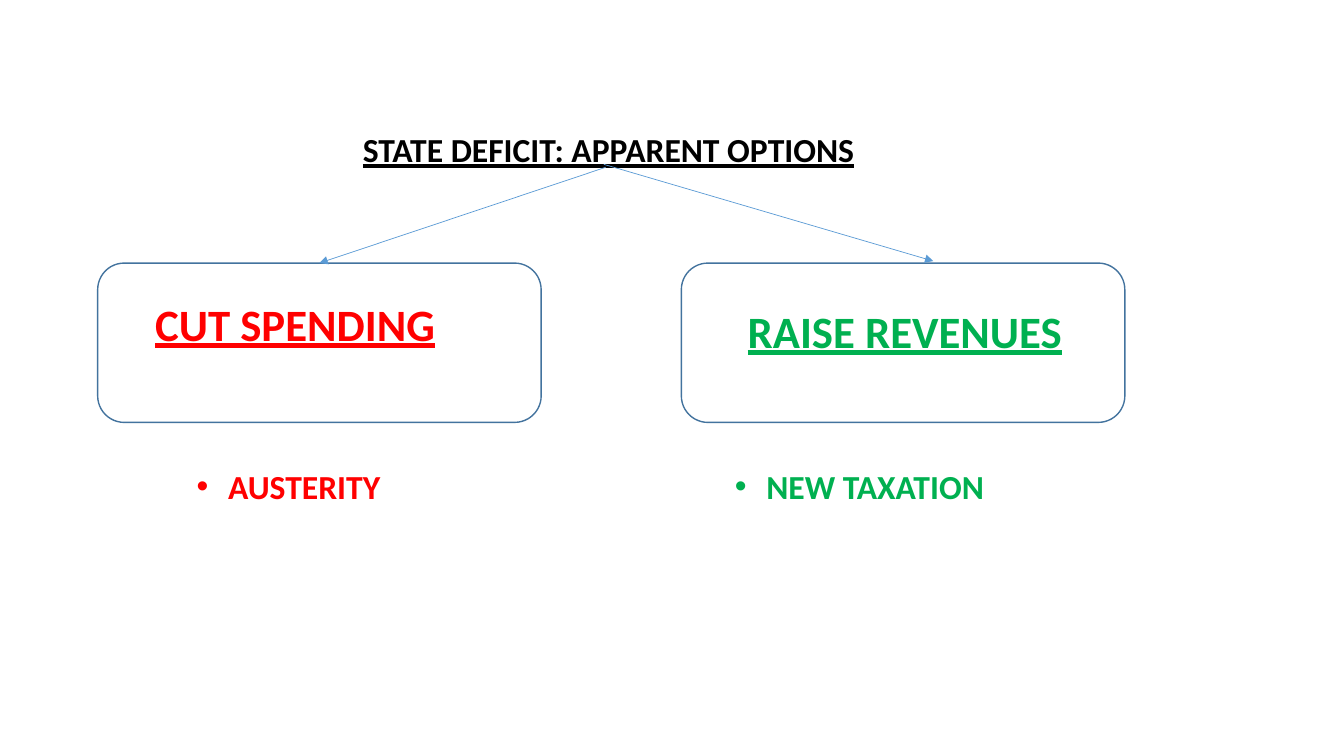
"""Build a slide that sets out the two apparent options for a state deficit."""
from lxml import etree
from pptx import Presentation
from pptx.dml.color import RGBColor
from pptx.enum.shapes import MSO_CONNECTOR, MSO_SHAPE
from pptx.enum.text import MSO_ANCHOR, MSO_AUTO_SIZE, PP_ALIGN
from pptx.oxml.ns import qn
from pptx.util import Pt

STRAIGHT = MSO_CONNECTOR.STRAIGHT
ROUNDED = MSO_SHAPE.ROUNDED_RECTANGLE
TOP = MSO_ANCHOR.TOP
LEFT = PP_ALIGN.LEFT
NO_FIT = MSO_AUTO_SIZE.NONE

COLORS = {"title": "000000", "cut": "FF0000", "raise": "00B050",
          "border": "43739E", "arrow": "5B9BD5"}
FONT = "Calibri"
TITLE = ("STATE DEFICIT: APPARENT OPTIONS", (252, 88.6, 440.6, 36))
OPTIONS = [
    {"color": "cut", "box_left": 69.8,
     "heading": ("CUT SPENDING", (103.7, 208.1, 353.5, 46)),
     "bullet": ("AUSTERITY", (133.2, 329, 295.2, 36)),
     "arrow": (432.7, 119.5, 228.2, 187.9)},
    {"color": "raise", "box_left": 486.7,
     "heading": ("RAISE REVENUES", (527, 213.1, 257.8, 46)),
     "bullet": ("NEW TAXATION", (517.7, 329, 231.8, 36)),
     "arrow": (431.3, 117.4, 666.7, 186.5)},
]
BOX_TOP, BOX_WIDTH, BOX_HEIGHT = 187.9, 316.8, 113.8
INDENT = 22.5


def rgb(name):
    return RGBColor.from_string(COLORS[name])


def write(sp, content, size, color, underline=None):
    text, place = content
    sp.left, sp.top, sp.width, sp.height = map(Pt, place)
    tf = sp.text_frame
    tf.word_wrap = True
    tf.auto_size = NO_FIT
    tf.vertical_anchor = TOP
    p = tf.paragraphs[0]
    p.alignment = LEFT
    p.space_before = Pt(0)
    r = p.add_run()
    r.text = text
    r.font.name = FONT
    r.font.size = Pt(size)
    r.font.bold = True
    r.font.underline = underline
    r.font.color.rgb = rgb(color)
    return p


def add_bullet(p):
    pPr = p._p.get_or_add_pPr()
    pPr.set("marL", str(Pt(INDENT)))
    pPr.set("indent", str(-Pt(INDENT)))
    etree.SubElement(pPr, qn("a:buFont")).set("typeface", "Arial")
    etree.SubElement(pPr, qn("a:buChar")).set("char", "•")


def add_box(s, left):
    sp = s.shapes.add_shape(ROUNDED, *map(Pt, (left, BOX_TOP, BOX_WIDTH, BOX_HEIGHT)))
    sp.shadow.inherit = False
    sp.fill.background()
    sp.line.color.rgb = rgb("border")
    sp.line.width = Pt(1)


def add_arrow(s, ends):
    cxn = s.shapes.add_connector(STRAIGHT, *map(Pt, ends))
    cxn.line.color.rgb = rgb("arrow")
    cxn.line.width = Pt(0.5)
    etree.SubElement(cxn.line._get_or_add_ln(), qn("a:tailEnd")).set("type", "triangle")
    etree.SubElement(cxn._element.spPr, qn("a:effectLst"))


def main():
    prs = Presentation()
    prs.slide_width, prs.slide_height = Pt(960), Pt(540)
    s = prs.slides.add_slide(prs.slide_layouts[3])
    title, *bodies = s.placeholders
    write(title, TITLE, 24, "title", underline=True)
    for option, body in zip(OPTIONS, bodies):
        color = option["color"]
        heading = s.shapes.add_textbox(0, 0, 0, 0)
        write(heading, option["heading"], 32, color, underline=True)
        add_box(s, option["box_left"])
        add_bullet(write(body, option["bullet"], 24, color))
        add_arrow(s, option["arrow"])
    prs.save("out.pptx")


if __name__ == "__main__":
    main()
